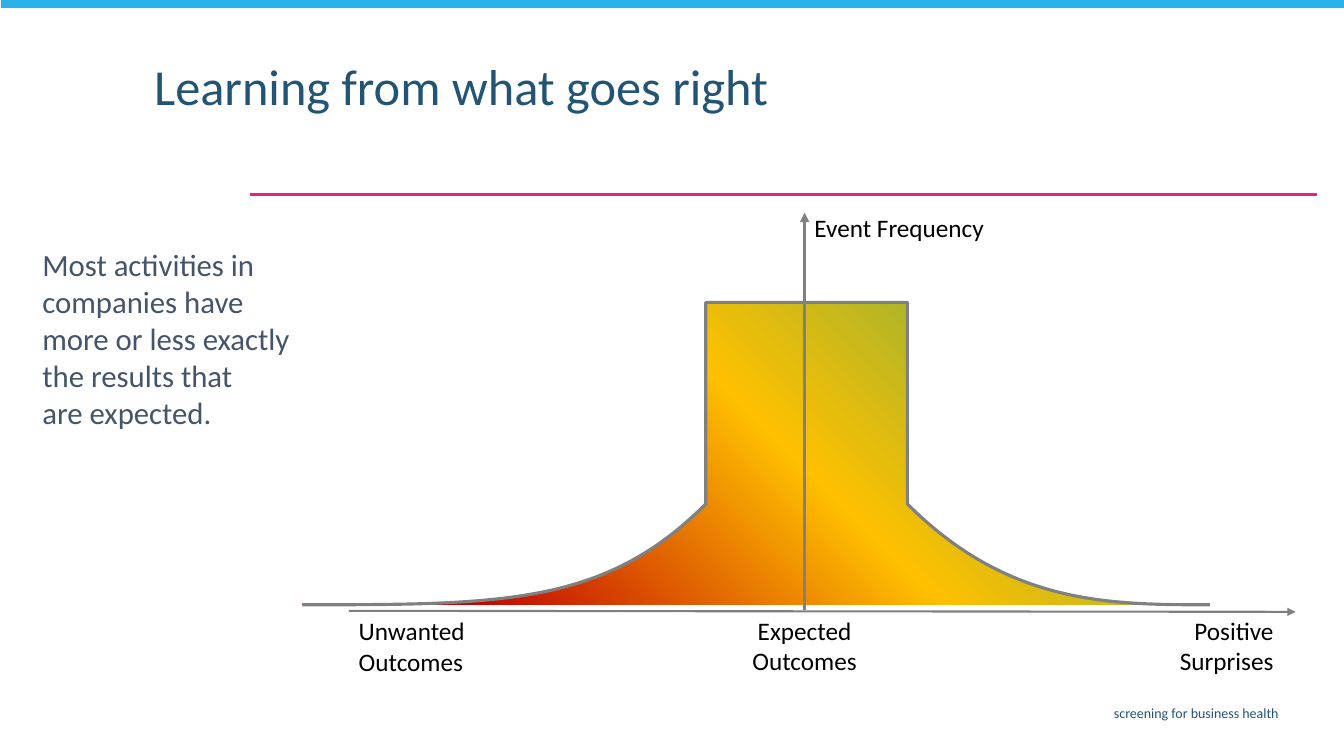
from dataclasses import dataclass

from lxml import etree
from pptx import Presentation
from pptx.dml.color import RGBColor
from pptx.enum.shapes import MSO_CONNECTOR, MSO_SHAPE
from pptx.enum.text import MSO_AUTO_SIZE, PP_ALIGN
from pptx.oxml import parse_xml
from pptx.oxml.ns import nsdecls, qn
from pptx.shapes.autoshape import Shape
from pptx.shapes.connector import Connector
from pptx.slide import Slide
from pptx.util import Inches, Pt

STRAIGHT = MSO_CONNECTOR.STRAIGHT
RECTANGLE = MSO_SHAPE.RECTANGLE
GROW = MSO_AUTO_SIZE.SHAPE_TO_FIT_TEXT
FIXED = MSO_AUTO_SIZE.NONE
LEFT, CENTER, RIGHT = PP_ALIGN.LEFT, PP_ALIGN.CENTER, PP_ALIGN.RIGHT

FONT = "Calibri"
PINK = RGBColor(0xEC, 0x21, 0x79)
SKY = RGBColor(0x29, 0xB3, 0xE8)
NAVY = RGBColor(0x24, 0x54, 0x73)
SLATE = RGBColor(0x44, 0x54, 0x6A)
BLACK = RGBColor(0x00, 0x00, 0x00)
GRAY = RGBColor(0x80, 0x80, 0x80)
AXIS_GRAY = RGBColor(0x7F, 0x7F, 0x7F)
RED = RGBColor(0xC0, 0x00, 0x00)
AMBER = RGBColor(0xFF, 0xC0, 0x00)
GREEN = RGBColor(0x70, 0xAD, 0x47)

Point = tuple[float, float]


@dataclass(frozen=True)
class AxisLabel:
    text: str
    left: float
    top: float
    width: float
    height: float
    align: PP_ALIGN


EXPECTED = AxisLabel("Expected\nOutcomes", 7.35, 6.05, 1.26, 0.71, CENTER)
SIDE_LABELS = (
    AxisLabel("Event Frequency", 7.98, 2.06, 1.9, 0.4, LEFT),
    AxisLabel("Unwanted\nOutcomes", 3.46, 6.06, 1.27, 0.71, LEFT),
    AxisLabel("Positive\nSurprises", 11.59, 6.05, 1.14, 0.71, RIGHT),
)

CURVE_START: Point = (3.46, 6.05)
CURVE_POINTS: tuple[Point, ...] = (
    (4.71, 5.89), (5.95, 5.73), (6.54, 5.27),
    (7.13, 4.81), (6.74, 3.71), (6.98, 3.3),
    (7.22, 2.88), (7.65, 2.8), (7.98, 2.8),
    (8.3, 2.8), (8.7, 2.88), (8.93, 3.3),
    (9.16, 3.71), (8.78, 4.83), (9.37, 5.29),
    (9.96, 5.75), (11.21, 5.9), (12.47, 6.06),
)
GRADIENT_STOPS = ((13, RED), (53, AMBER), (92, GREEN))


def add_text(page: Slide, text: str, *, left: float, top: float, width: float,
             height: float, size: float, color: RGBColor,
             align: PP_ALIGN = LEFT, wrap: bool = True, grow: bool = False,
             line_spacing: float = 1.0, inset_x: float = 0.1,
             inset_y: float = 0.05) -> Shape:
    box = page.shapes.add_textbox(Inches(left), Inches(top), Inches(width), Inches(height))
    frame = box.text_frame
    frame.word_wrap = wrap
    frame.auto_size = GROW if grow else FIXED
    frame.margin_left = frame.margin_right = Inches(inset_x)
    frame.margin_top = frame.margin_bottom = Inches(inset_y)
    para = frame.paragraphs[0]
    para.text = text
    para.alignment = align
    para.line_spacing = line_spacing
    for span in para.runs:
        span.font.name = FONT
        span.font.size = Pt(size)
        span.font.color.rgb = color
    return box


def add_label(page: Slide, label: AxisLabel) -> Shape:
    return add_text(page, label.text, left=label.left, top=label.top, width=label.width,
                    height=label.height, size=18, color=BLACK, align=label.align,
                    wrap=False, grow=True)


def add_line(page: Slide, start: Point, end: Point, color: RGBColor, weight: float,
             arrow: bool = False) -> Connector:
    line = page.shapes.add_connector(STRAIGHT, Inches(start[0]), Inches(start[1]),
                                     Inches(end[0]), Inches(end[1]))
    line.line.color.rgb = color
    line.line.width = Pt(weight)
    if arrow:
        etree.SubElement(line.line._get_or_add_ln(), qn("a:tailEnd"), type="triangle")
    etree.SubElement(line._element.spPr, qn("a:effectLst"))
    return line


def add_bar(page: Slide) -> None:
    bar = page.shapes.add_shape(RECTANGLE, Inches(0.01), Inches(-0.02),
                                Inches(13.34), Inches(0.1))
    bar.shadow.inherit = False
    bar.fill.solid()
    bar.fill.fore_color.rgb = SKY
    bar.line.fill.background()


def bend_segments(shape: Shape) -> None:
    segments = list(shape._element.iter(qn("a:lnTo")))
    for first in range(0, len(segments), 3):
        bend = etree.Element(qn("a:cubicBezTo"))
        segments[first].addprevious(bend)
        for segment in segments[first:first + 3]:
            bend.append(segment[0])
            segment.getparent().remove(segment)


def fill_from_corner(shape: Shape) -> None:
    stops = "".join(
        f'<a:gs pos="{percent * 1000}"><a:srgbClr val="{color}"/></a:gs>'
        for percent, color in GRADIENT_STOPS
    )
    gradient = parse_xml(
        f'<a:gradFill {nsdecls("a")} rotWithShape="1"><a:gsLst>{stops}</a:gsLst>'
        '<a:path path="circle"><a:fillToRect t="100000" r="100000"/></a:path></a:gradFill>'
    )
    shape.fill.background()
    properties = shape._element.spPr
    properties.replace(properties.find(qn("a:noFill")), gradient)


def add_bell_curve(page: Slide) -> None:
    builder = page.shapes.build_freeform(*CURVE_START, scale=float(Inches(1)))
    builder.add_line_segments(CURVE_POINTS, close=False)
    curve = builder.convert_to_shape()
    curve.shadow.inherit = False
    bend_segments(curve)
    fill_from_corner(curve)
    curve.line.color.rgb = GRAY
    curve.line.width = Pt(2.25)


def main() -> None:
    deck = Presentation()
    deck.slide_width = Inches(13.33)
    deck.slide_height = Inches(7.5)
    page = deck.slides.add_slide(deck.slide_layouts[6])

    add_line(page, (13.06, 1.93), (2.48, 1.93), PINK, 1.5)
    add_bar(page)
    add_text(page, "screening for business health", left=3.65, top=6.94, width=9.13,
             height=0.29, size=10, color=NAVY, align=RIGHT)
    add_text(page, "Learning from what goes right", left=1.43, top=0.57, width=9.68,
             height=0.76, size=36, color=NAVY, line_spacing=0.9)
    add_text(page, "Most activities in companies have more or less exactly "
             "the results that \nare expected.", left=0.33, top=2.4, width=2.71,
             height=1.94, size=22, color=SLATE, grow=True, inset_x=0.09, inset_y=0.04)

    add_bell_curve(page)
    expected = add_label(page, EXPECTED)
    frequency_axis = add_line(page, (7.98, 6.05), (7.98, 2.11), GRAY, 2.25, arrow=True)
    frequency_axis.begin_connect(expected, 0)
    add_line(page, (3.46, 6.06), (12.85, 6.07), AXIS_GRAY, 1.5, arrow=True)
    for label in SIDE_LABELS:
        add_label(page, label)

    deck.save("out.pptx")


if __name__ == "__main__":
    main()
